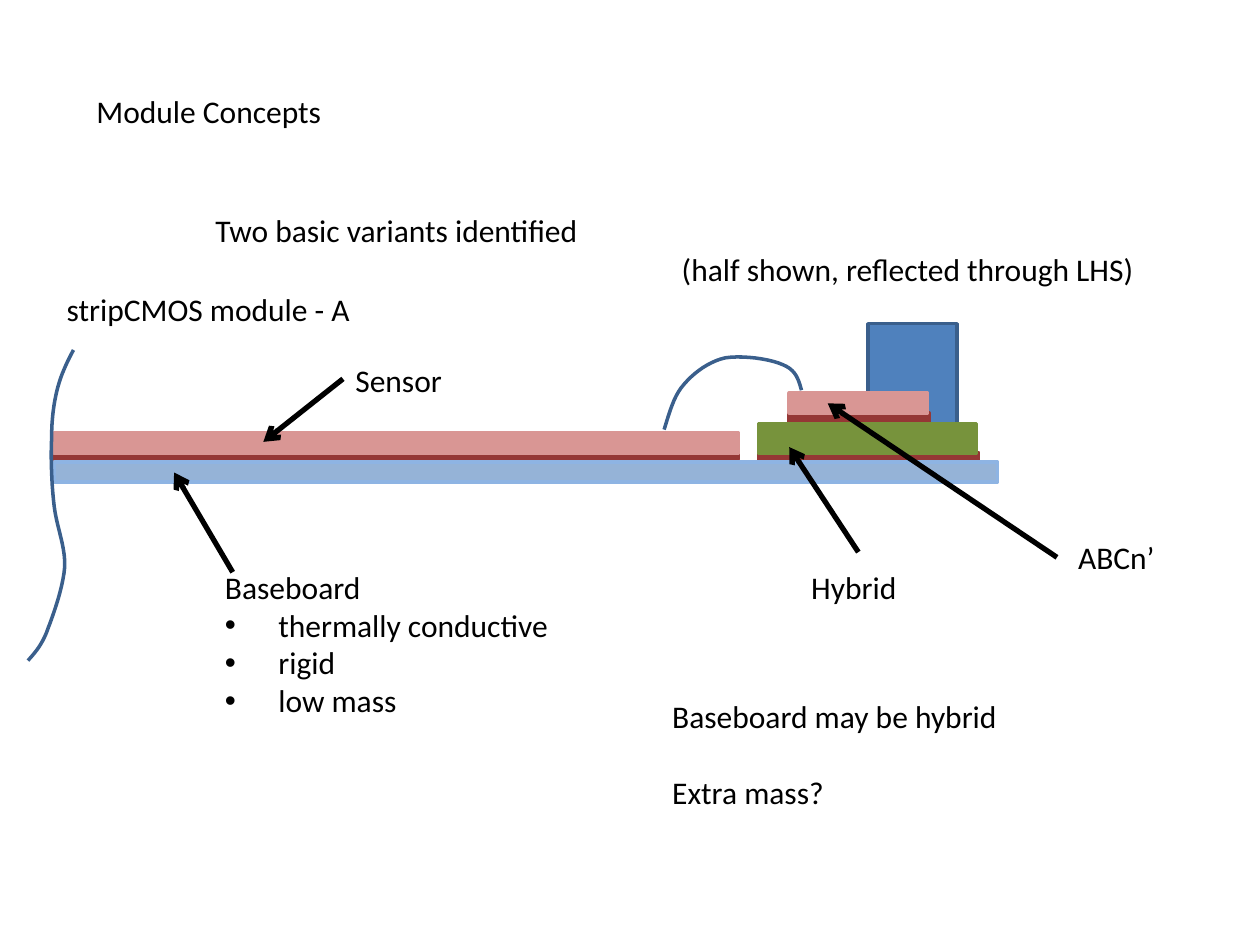
from lxml import etree
from pptx import Presentation
from pptx import util as u
from pptx.dml.color import RGBColor
from pptx.enum import shapes, text
from pptx.oxml import ns

Pt = u.Pt
BLACK = RGBColor(0x00, 0x00, 0x00)
BLUE = RGBColor(0x4F, 0x81, 0xBD)
DARK_BLUE = RGBColor(0x3A, 0x5F, 0x8C)
GLUE = RGBColor(0x95, 0x37, 0x35)
BOARD = RGBColor(0x95, 0xB3, 0xD7)
BOARD_EDGE = RGBColor(0x8E, 0xB4, 0xE3)
SILICON = RGBColor(0xD9, 0x96, 0x94)
GREEN = RGBColor(0x77, 0x93, 0x3C)

LINE_HEIGHT = 22
BULLET_INDENT = 30.5
CURVE_STEPS = 10

prs = Presentation()
prs.slide_width, prs.slide_height = Pt(720), Pt(540)
slide = prs.slides.add_slide(prs.slide_layouts[6])


def add_label(left, top, width, height, lines, wrap=False):
    label = slide.shapes.add_textbox(Pt(left), Pt(top), Pt(width), Pt(height))
    frame = label.text_frame
    frame.word_wrap = wrap
    frame.auto_size = text.MSO_AUTO_SIZE.SHAPE_TO_FIT_TEXT
    frame.text = "\n".join(lines)
    for paragraph in frame.paragraphs:
        font = paragraph.runs[0].font
        font.name, font.size = "Calibri", Pt(18)
        font.color.rgb = BLACK
    return frame.paragraphs


def add_curve(start, beziers):
    """Draw an open outline through cubic Béziers, each (control, control, end)."""
    points = []
    here = start
    for c1, c2, end in beziers:
        for step in range(1, CURVE_STEPS + 1):
            t = step / CURVE_STEPS
            weights = ((1 - t) ** 3, 3 * t * (1 - t) ** 2, 3 * t * t * (1 - t), t ** 3)
            points.append(tuple(
                Pt(sum(w * p[axis] for w, p in zip(weights, (here, c1, c2, end))))
                for axis in (0, 1)))
        here = end
    builder = slide.shapes.build_freeform(Pt(start[0]), Pt(start[1]))
    builder.add_line_segments(points, close=False)
    curve = builder.convert_to_shape()
    curve.shadow.inherit = False
    curve.fill.background()
    curve.line.color.rgb = DARK_BLUE
    curve.line.width = Pt(2)


# Module cross-section, from back to front: left, top, width, height, fill, edge
layers = [
    (496, 185, 51, 57, BLUE, DARK_BLUE),
    (451, 236, 80, 6, GLUE, GLUE),
    (31, 258.5, 391, 4, GLUE, GLUE),
    (433.5, 258.5, 125.5, 5.5, GLUE, GLUE),
    (31, 264, 539, 11.5, BOARD, BOARD_EDGE),
    (31, 247.5, 391, 11.5, SILICON, SILICON),
    (433.5, 242, 124.5, 17, GREEN, GREEN),
    (451, 224.5, 79, 11.5, SILICON, SILICON),
]
for left, top, width, height, fill, edge in layers:
    layer = slide.shapes.add_shape(
        shapes.MSO_SHAPE.RECTANGLE, Pt(left), Pt(top), Pt(width), Pt(height))
    layer.shadow.inherit = False
    layer.fill.solid()
    layer.fill.fore_color.rgb = fill
    layer.line.color.rgb = edge
    layer.line.width = Pt(2)

# Wire bond from chip to sensor
add_curve((458, 223), [
    ((456.5, 217.5), (455, 211.5), (447.5, 208.5)),
    ((440, 205), (424, 203), (414.5, 204.5)),
    ((405.5, 206.5), (397, 212.5), (391, 219.5)),
    ((385, 226), (382.5, 236), (379.5, 245.5)),
])
# Break line at the mirror side
add_curve((42, 200), [
    ((38, 207.5), (34.5, 215), (32.5, 223.5)),
    ((30.5, 232), (29.5, 240.5), (29.5, 251)),
    ((29, 262), (29.5, 277), (31, 289.5)),
    ((32.5, 301.5), (37.5, 312.5), (37, 324)),
    ((36, 335.5), (31, 350), (27.5, 359)),
    ((24.5, 368), (20, 373), (16, 377.5)),
])

# Pointers from label to part
for x1, y1, x2, y2 in [
    (133, 327, 99.5, 270),
    (196, 216.5, 150.5, 252.5),
    (490.5, 315.5, 451, 255.5),
    (604, 318.5, 473, 230.5),
]:
    pointer = slide.shapes.add_connector(
        shapes.MSO_CONNECTOR.STRAIGHT, Pt(x1), Pt(y1), Pt(x2), Pt(y2))
    pointer.line.color.rgb = BLACK
    pointer.line.width = Pt(3)
    etree.SubElement(pointer.line._get_or_add_ln(), ns.qn("a:tailEnd"), type="arrow")
    etree.SubElement(pointer._element.spPr, ns.qn("a:effectLst"))

for left, top, width, caption in [
    (48, 49, 145, "Module Concepts"),
    (116, 117, 224, "Two basic variants identified"),
    (382.5, 139.5, 276.5, "(half shown, reflected through LHS)"),
    (31, 162, 178, "stripCMOS module - A"),
    (196, 202.5, 65, "Sensor"),
    (456.5, 321, 64, "Hybrid"),
    (609, 304, 58.5, "ABCn’"),
]:
    add_label(left, top, width, 29, [caption])

baseboard = add_label(
    121.5, 321, 201.5, 94.5,
    ["Baseboard", "thermally conductive", "rigid", "low mass"])
for feature in baseboard[1:]:
    properties = feature._p.get_or_add_pPr()
    properties.set("marL", str(Pt(BULLET_INDENT)))
    properties.set("indent", str(-Pt(BULLET_INDENT)))
    etree.SubElement(properties, ns.qn("a:buFont"), typeface="Arial")
    etree.SubElement(properties, ns.qn("a:buChar"), char="•")

remarks = add_label(
    377, 394.5, 284, 73, ["Baseboard may be hybrid", "Extra mass?"], wrap=True)
remarks[1].space_before = Pt(LINE_HEIGHT)

prs.save("out.pptx")
